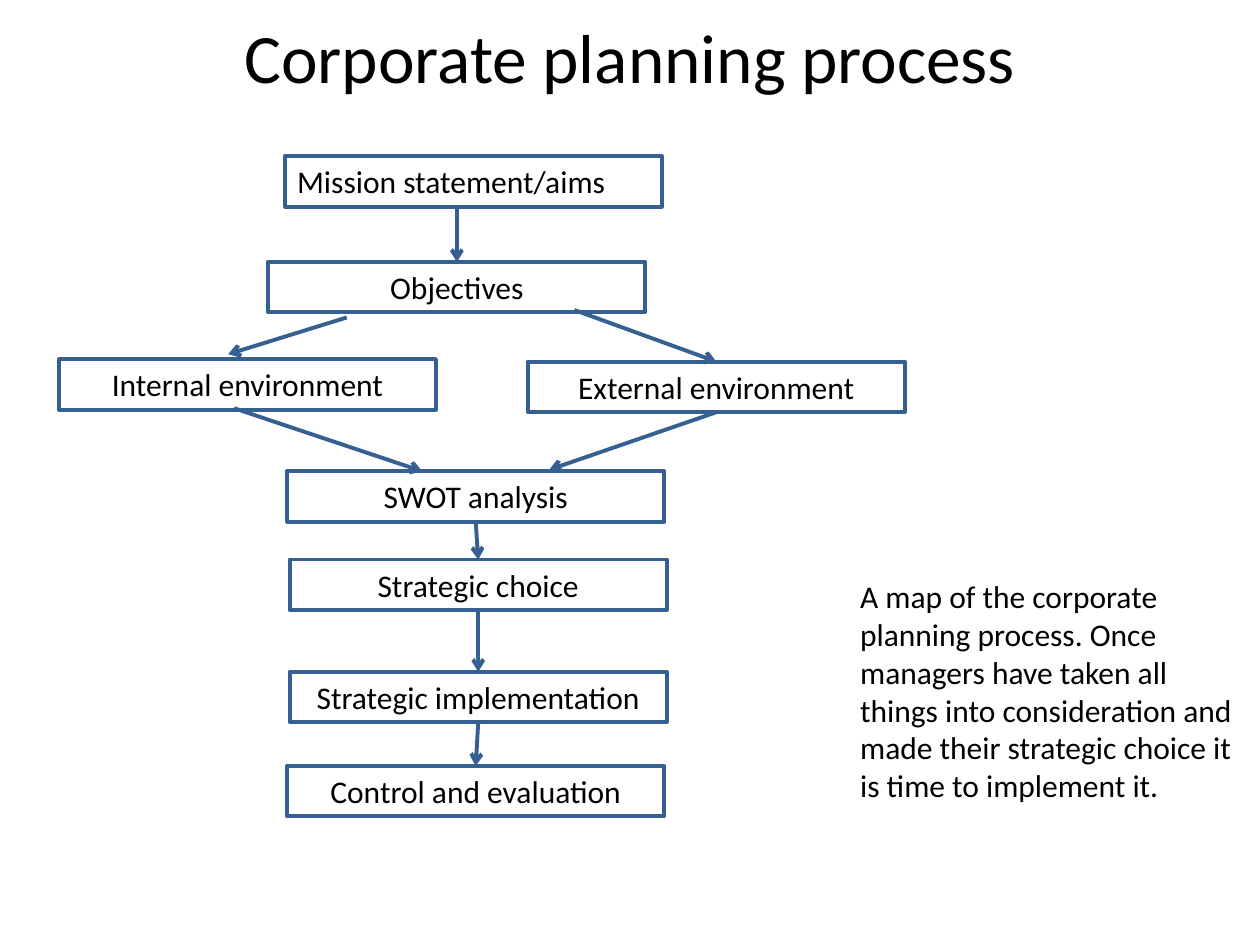
from lxml import etree
from pptx import Presentation
from pptx.dml.color import RGBColor
from pptx.enum.shapes import MSO_CONNECTOR, MSO_SHAPE
from pptx.enum.text import MSO_ANCHOR, MSO_AUTO_SIZE, PP_ALIGN
from pptx.oxml.ns import qn
from pptx.util import Cm, Pt

THEME = {
    "font": "Calibri",
    "text": RGBColor(0x00, 0x00, 0x00),
    "line": RGBColor(0x37, 0x60, 0x92),
    "line_width": Pt(2.25),
    "title_size": Pt(39.6),
    "body_size": Pt(18),
}

TITLE = "Corporate planning process"
NOTE = ("A map of the corporate planning process. Once managers have taken all "
        "things into consideration and made their strategic choice it is time "
        "to implement it.")

# Left and top of each step, in cm
BOX_SIZE = (7.6, 1.02)
STEPS = {
    "Mission statement/aims": (5.74, 3.15),
    "Objectives": (5.41, 5.28),
    "SWOT analysis": (5.79, 9.5),
    "Strategic choice": (5.84, 11.28),
    "Strategic implementation": (5.84, 13.54),
    "Control and evaluation": (5.79, 15.44),
    "Internal environment": (1.19, 7.24),
    "External environment": (10.64, 7.29),
}
LEFT_ALIGNED = {"Mission statement/aims"}

# An end is a step name (joined at its middle) or a point in cm
ARROWS = [
    ((9.21, 4.17), "Objectives"),
    ("SWOT analysis", "Strategic choice"),
    ("Strategic choice", "Strategic implementation"),
    ("Strategic implementation", "Control and evaluation"),
    ((6.99, 6.4), (4.6, 7.14)),
    ((11.58, 6.25), "External environment"),
    ((4.72, 8.23), (8.51, 9.5)),
    ("External environment", (11.07, 9.47)),
]
TOP, BOTTOM = 0, 2


def write_text(shape, text, size=THEME["body_size"], align=PP_ALIGN.LEFT,
               anchor=MSO_ANCHOR.TOP, auto_size=MSO_AUTO_SIZE.SHAPE_TO_FIT_TEXT):
    frame = shape.text_frame
    frame.word_wrap = True
    frame.auto_size = auto_size
    frame.vertical_anchor = anchor
    paragraph = frame.paragraphs[0]
    paragraph.alignment = align
    run = paragraph.add_run()
    run.text = text
    run.font.name = THEME["font"]
    run.font.size = size
    run.font.color.rgb = THEME["text"]


def style_line(line):
    line.color.rgb = THEME["line"]
    line.width = THEME["line_width"]


def add_step(slide, text, position):
    box = slide.shapes.add_shape(
        MSO_SHAPE.RECTANGLE, *map(Cm, position + BOX_SIZE))
    box.shadow.inherit = False
    box.fill.background()
    style_line(box.line)
    align = PP_ALIGN.LEFT if text in LEFT_ALIGNED else PP_ALIGN.CENTER
    write_text(box, text, align=align)
    return box


def end_point(end, side):
    """Return the point in cm for an arrow end."""
    if end not in STEPS:
        return end
    left, top = STEPS[end]
    width, height = BOX_SIZE
    return left + width / 2, top + (height if side == BOTTOM else 0)


def add_arrow(slide, boxes, start, end):
    points = end_point(start, BOTTOM) + end_point(end, TOP)
    arrow = slide.shapes.add_connector(MSO_CONNECTOR.STRAIGHT, *map(Cm, points))
    if start in boxes:
        arrow.begin_connect(boxes[start], BOTTOM)
    if end in boxes:
        arrow.end_connect(boxes[end], TOP)
    style_line(arrow.line)
    etree.SubElement(arrow.line._get_or_add_ln(), qn("a:tailEnd"), type="arrow")
    etree.SubElement(arrow._element.spPr, qn("a:effectLst"))


def main():
    presentation = Presentation()
    presentation.slide_width, presentation.slide_height = Cm(25.4), Cm(19.05)
    slide = presentation.slides.add_slide(presentation.slide_layouts[5])

    title = slide.shapes.title
    title.left, title.top, title.width, title.height = map(
        Cm, (1.3, 0.2, 22.8, 1.83))
    write_text(title, TITLE, size=THEME["title_size"], align=PP_ALIGN.CENTER,
               anchor=MSO_ANCHOR.MIDDLE, auto_size=MSO_AUTO_SIZE.NONE)

    boxes = {text: add_step(slide, text, position)
             for text, position in STEPS.items()}
    for start, end in ARROWS:
        add_arrow(slide, boxes, start, end)

    note = slide.shapes.add_textbox(*map(Cm, (17.09, 11.51, 8.13, 4.88)))
    write_text(note, NOTE)

    presentation.save("out.pptx")


if __name__ == "__main__":
    main()
